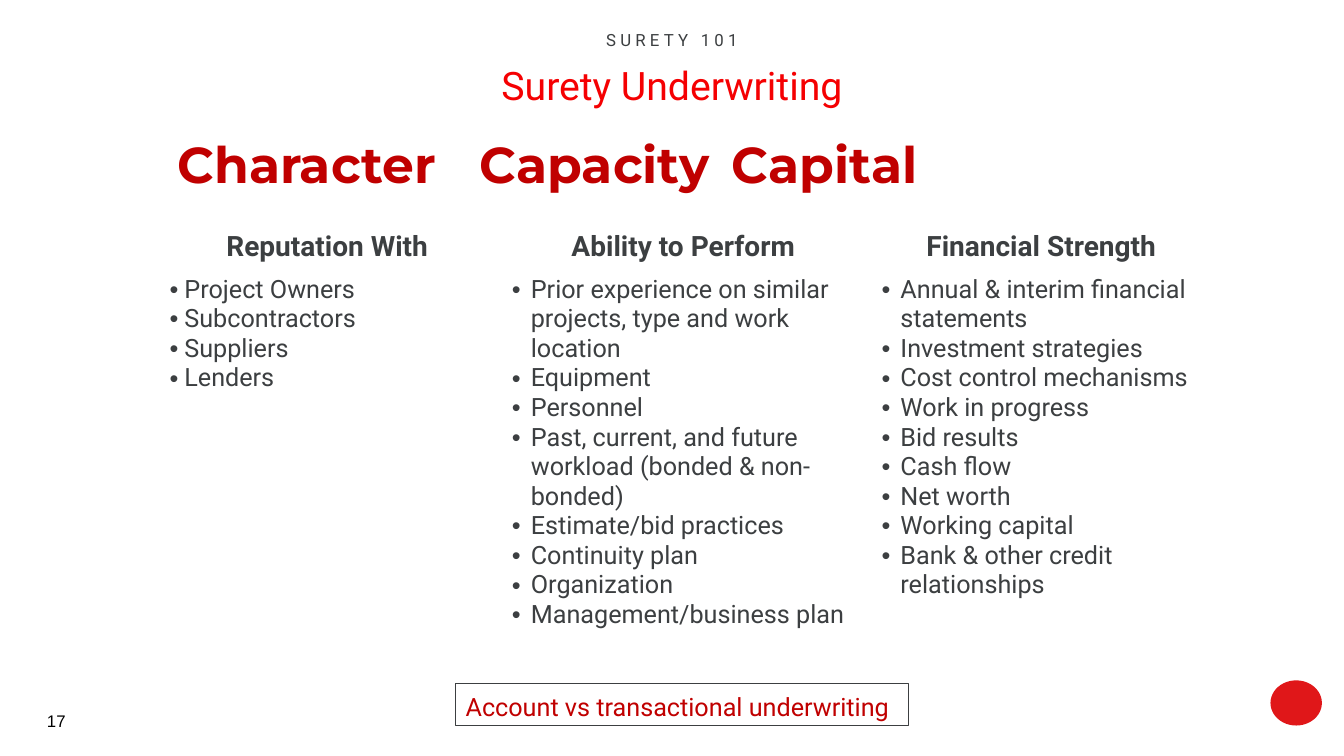
from dataclasses import dataclass

import pptx
import pptx.dml.color
import pptx.enum.shapes
import pptx.enum.text
import pptx.oxml.ns
import pptx.util
from lxml import etree

PX = 9525  # EMU in one px, 96 px to the inch
HUES = {"title": "F50002", "text": "3C3F41", "head": "C00000",
        "logo": "E01719", "page": "000000"}
ALIGN = pptx.enum.text.PP_ALIGN
SHAPE = pptx.enum.shapes.MSO_SHAPE


@dataclass
class Box:
    left: int
    top: int
    width: int
    height: int

    def emu(self) -> list[int]:
        return [n * PX for n in (self.left, self.top, self.width, self.height)]


@dataclass
class Column:
    head: str
    width: int
    indent: int
    items: list[str]


COLUMNS = [
    Column("Reputation With ", 326, 14,
           ["Project Owners", "Subcontractors", "Suppliers", "Lenders"]),
    Column("Ability to Perform ", 352, 18,
           ["Prior experience on similar projects, type and work location",
            "Equipment", "Personnel",
            "Past, current, and future workload (bonded & non-bonded)",
            "Estimate/bid practices", "Continuity plan", "Organization",
            "Management/business plan"]),
    Column("Financial Strength ", 330, 18,
           ["Annual & interim financial statements", "Investment strategies",
            "Cost control mechanisms", "Work in progress", "Bid results",
            "Cash flow", "Net worth", "Working capital",
            "Bank & other credit relationships"]),
]


def add_tag(parent, tag: str, **attrs):
    node = etree.SubElement(parent, pptx.oxml.ns.qn(tag))
    for key, value in attrs.items():
        node.set(key, str(value))
    return node


def write(frame, lines: list[str], *, size: int, hue: str = "text",
          font: str = "Roboto", bold: bool = False, align=ALIGN.LEFT,
          leading: float = 1.0, track: int = 0, indent: int = 0,
          tabs: tuple[int, ...] = ()) -> None:
    """Fill a text frame; an indent makes the lines a bulleted list."""
    frame.word_wrap = True
    for row, line in enumerate(lines):
        para = frame.add_paragraph() if row else frame.paragraphs[0]
        props = para._p.get_or_add_pPr()
        props.set("marL", str(indent * PX))
        props.set("indent", str(-indent * PX))
        if indent:
            add_tag(props, "a:buFont", typeface="Arial")
            add_tag(props, "a:buChar", char="•")
        else:
            add_tag(props, "a:buNone")
        if tabs:
            stops = add_tag(props, "a:tabLst")
            for stop in tabs:
                add_tag(stops, "a:tab", pos=stop * PX, algn="l")
        para.alignment = align
        para.line_spacing = leading
        para.space_before = para.space_after = pptx.util.Pt(0)
        run = para.add_run()
        run.text = line
        run.font.size = pptx.util.Pt(size)
        run.font.name = font
        run.font.bold = bold
        run.font.color.rgb = pptx.dml.color.RGBColor.from_string(HUES[hue])
        if track:
            run.font._element.set("spc", str(track))


def place(holder, box: Box):
    """Move a placeholder and return its text frame."""
    holder.left, holder.top, holder.width, holder.height = box.emu()
    frame = holder.text_frame
    frame.auto_size = pptx.enum.text.MSO_AUTO_SIZE.NONE
    frame.vertical_anchor = pptx.enum.text.MSO_ANCHOR.TOP
    return frame


def add_grid(slide, box: Box, top_row: int) -> None:
    table = slide.shapes.add_table(2, len(COLUMNS), *box.emu()).table
    table.first_row = table.horz_banding = False
    table.rows[0].height = top_row * PX
    table.rows[1].height = (box.height - top_row) * PX
    for num, col in enumerate(COLUMNS):
        table.columns[num].width = col.width * PX
        head, body = table.cell(0, num), table.cell(1, num)
        for cell in (head, body):
            cell.fill.background()
        write(head.text_frame, [col.head], size=20, bold=True,
              align=ALIGN.CENTER)
        write(body.text_frame, col.items, size=18, indent=col.indent)


def add_block(slide, kind, box: Box):
    shape = slide.shapes.add_shape(kind, *box.emu())
    shape.shadow.inherit = False
    return shape


def main() -> None:
    deck = pptx.Presentation()
    deck.slide_width, deck.slide_height = 1280 * PX, 720 * PX
    slide = deck.slides.add_slide(deck.slide_layouts[1])

    # Title and the line above it
    write(place(slide.shapes.title, Box(48, 49, 1184, 47)),
          ["Surety Underwriting"], size=28, hue="title",
          align=ALIGN.CENTER, leading=1.1)
    write(place(slide.placeholders[1], Box(136, 22, 1008, 29)),
          ["SURETY 101"], size=12, align=ALIGN.CENTER, leading=1.1, track=300)

    # Three big headings on tab stops
    heads = slide.shapes.add_textbox(*Box(104, 122, 1020, 68).emu()).text_frame
    heads.margin_left = 65 * PX
    write(heads, ["Character\tCapacity\tCapital"], size=36, hue="head",
          font="Montserrat", bold=True, tabs=(355, 709))

    # Lists
    add_grid(slide, Box(152, 215, 1008, 403), 42)

    # Framed note
    note = add_block(slide, SHAPE.RECTANGLE, Box(434, 651, 431, 40))
    note.fill.background()
    note.line.color.rgb = pptx.dml.color.RGBColor.from_string(HUES["text"])
    note.line.width = pptx.util.Pt(0.75)
    note.text_frame.vertical_anchor = pptx.enum.text.MSO_ANCHOR.TOP
    write(note.text_frame, ["Account vs transactional underwriting"],
          size=18, hue="head", leading=1.1)

    # Page number and plain mark
    page = slide.shapes.add_textbox(*Box(24, 667, 48, 38).emu()).text_frame
    page.vertical_anchor = pptx.enum.text.MSO_ANCHOR.MIDDLE
    write(page, ["17"], size=12, hue="page", font="Arial", align=ALIGN.RIGHT)
    mark = add_block(slide, SHAPE.OVAL, Box(1210, 648, 49, 43))
    mark.fill.solid()
    mark.fill.fore_color.rgb = pptx.dml.color.RGBColor.from_string(HUES["logo"])
    mark.line.fill.background()

    deck.save("out.pptx")


if __name__ == "__main__":
    main()
